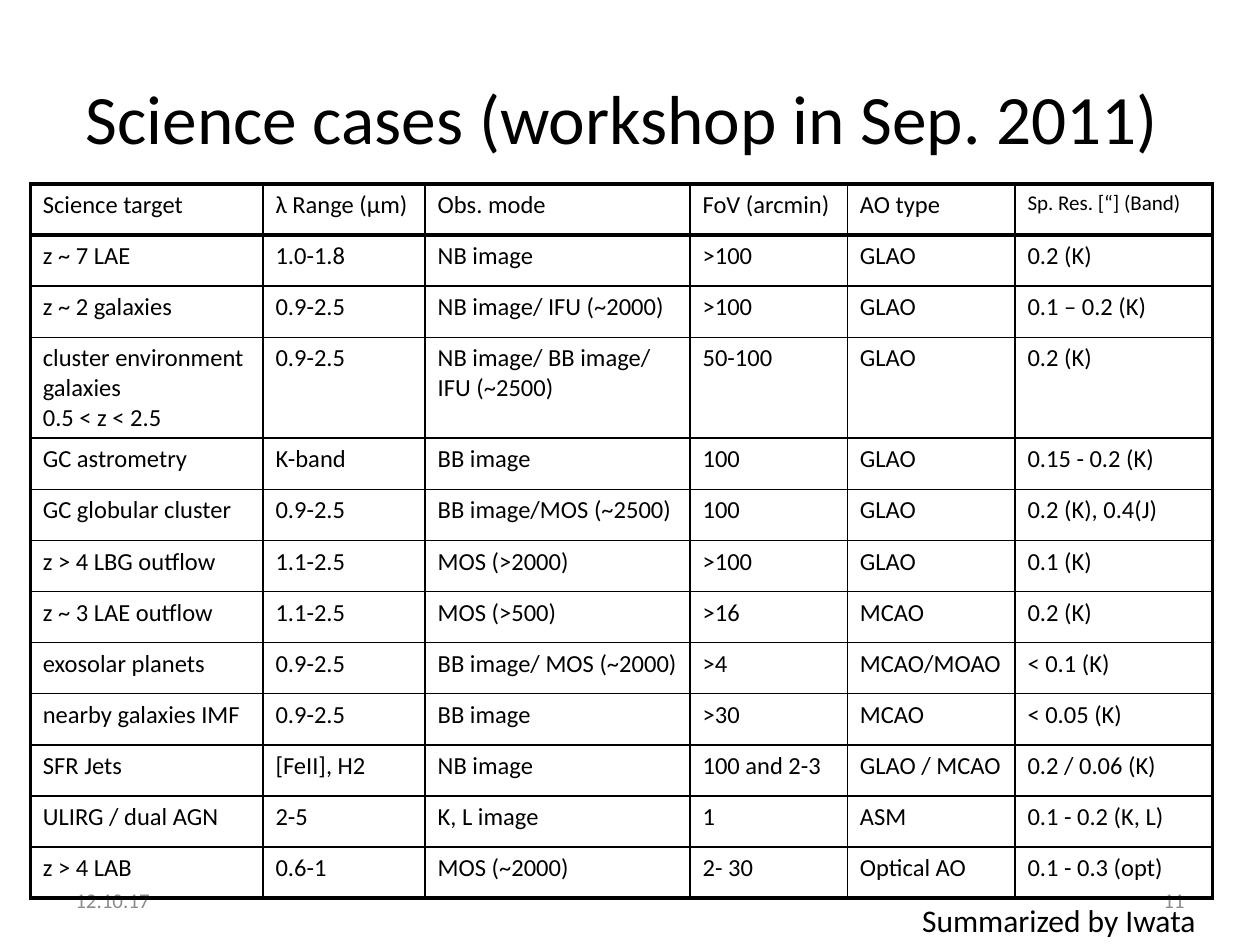
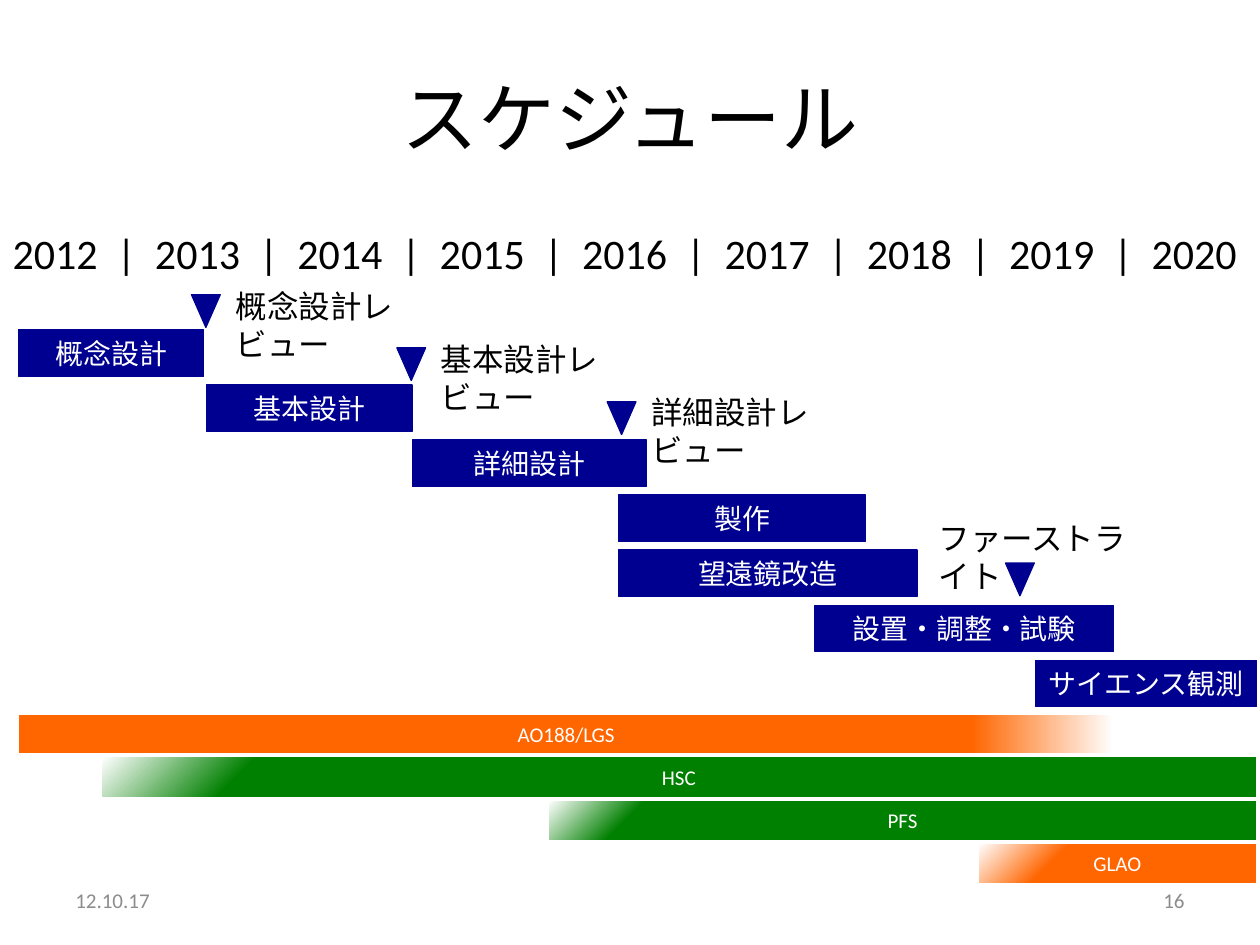
from pptx import Presentation
from pptx.dml.color import RGBColor
from pptx.enum.shapes import MSO_SHAPE
from pptx.enum.text import MSO_ANCHOR, PP_ALIGN
from pptx.oxml import parse_xml
from pptx.oxml.ns import nsdecls, qn
from pptx.util import Cm, Pt

# Shared look
FONT = "Calibri"
BLACK, WHITE, GREY = "000000", "FFFFFF", "8C8C8C"
NAVY, ORANGE, GREEN = "000090", "FF6600", "008000"
DATE = "12.10.17"
rgb = RGBColor.from_string


def style(tf, size, color=BLACK, align=PP_ALIGN.LEFT):
    for p in tf.paragraphs:
        p.alignment = align
        for r in p.runs:
            r.font.name = FONT
            r.font.size = Pt(size)
            r.font.bold = False
            r.font.color.rgb = rgb(color)


def add_box(s, kind, x, y, w, h, text="", size=18, color=BLACK,
            align=PP_ALIGN.LEFT, fill=None):
    """Add a preset shape, or a text box when kind is None."""
    box = (Cm(x), Cm(y), Cm(w), Cm(h))
    if kind is None:
        sp = s.shapes.add_textbox(*box)
    else:
        sp = s.shapes.add_shape(kind, *box)
        sp.shadow.inherit = False
        sp.text_frame.margin_left = sp.text_frame.margin_right = 0
        if fill:
            sp.fill.solid()
            sp.fill.fore_color.rgb = rgb(fill)
            sp.line.color.rgb = rgb(fill)
            sp.line.width = Pt(0.75)
        else:
            sp.fill.background()
            sp.line.fill.background()
    tf = sp.text_frame
    tf.word_wrap = True
    tf.text = text
    style(tf, size, color, align)
    return sp


prs = Presentation()
prs.slide_width, prs.slide_height = Cm(25.4), Cm(19.05)

# Slides with title, date and number
slides = []
for layout, title, size, number in [
    (5, "Science cases (workshop in Sep. 2011) ", 39.6, "11"),
    (1, "スケジュール", 44, "16"),
]:
    s = prs.slides.add_slide(prs.slide_layouts[layout])
    sp = s.shapes.title
    sp.left, sp.top, sp.width, sp.height = Cm(1.27), Cm(0.76), Cm(22.86), Cm(3.18)
    sp.text_frame.text = title
    sp.text_frame.vertical_anchor = MSO_ANCHOR.MIDDLE
    style(sp.text_frame, size, align=PP_ALIGN.CENTER)
    for x, text, align in [(1.27, DATE, PP_ALIGN.LEFT),
                           (18.21, number, PP_ALIGN.RIGHT)]:
        sp = add_box(s, None, x, 17.65, 5.92, 1.01, text, 12, GREY, align)
        sp.text_frame.vertical_anchor = MSO_ANCHOR.MIDDLE
    slides.append(s)
cases_slide, schedule_slide = slides

# Science case table
cases = [
    ("Science target", "λ Range (μm)", "Obs. mode", "FoV (arcmin)", "AO type",
     "Sp. Res. [“] (Band)"),
    ("z ~ 7 LAE", "1.0-1.8", "NB image", ">100", "GLAO", "0.2 (K)"),
    ("z ~ 2 galaxies", "0.9-2.5", "NB image/ IFU (~2000)", ">100", "GLAO",
     "0.1 – 0.2 (K)"),
    ("cluster environment galaxies\v0.5 < z < 2.5", "0.9-2.5",
     "NB image/ BB image/ IFU (~2500)", "50-100", "GLAO", "0.2 (K)"),
    ("GC astrometry", "K-band", "BB image", "100", "GLAO", "0.15 - 0.2 (K)"),
    ("GC globular cluster", "0.9-2.5", "BB image/MOS (~2500)", "100", "GLAO",
     "0.2 (K), 0.4(J)"),
    ("z > 4 LBG outflow", "1.1-2.5", "MOS (>2000)", ">100", "GLAO", "0.1 (K)"),
    ("z ~ 3 LAE outflow", "1.1-2.5", "MOS (>500)", ">16", "MCAO", "0.2 (K)"),
    ("exosolar planets", "0.9-2.5", "BB image/ MOS (~2000)", ">4", "MCAO/MOAO",
     "< 0.1 (K)"),
    ("nearby galaxies IMF", "0.9-2.5", "BB image", ">30", "MCAO", "< 0.05 (K)"),
    ("SFR Jets", "[FeII], H2", "NB image", "100 and 2-3", "GLAO / MCAO",
     "0.2 / 0.06 (K)"),
    ("ULIRG / dual AGN", "2-5", "K, L image", "1", "ASM", "0.1 - 0.2 (K, L)"),
    ("z > 4 LAB", "0.6-1", "MOS (~2000)", "2- 30", "Optical AO",
     "0.1 - 0.3 (opt)"),
]
col_widths = [4.69, 3.27, 5.34, 3.17, 3.38, 3.98]
row_height = 1.03
last_row, last_col = len(cases) - 1, len(col_widths) - 1
table = cases_slide.shapes.add_table(
    len(cases), len(col_widths), Cm(0.61), Cm(3.71),
    Cm(sum(col_widths)), Cm(row_height * len(cases))).table
table.first_row = table.horz_banding = False
for col, width in zip(table.columns, col_widths):
    col.width = Cm(width)
for i, case in enumerate(cases):
    table.rows[i].height = Cm(row_height)
    for j, text in enumerate(case):
        cell = table.cell(i, j)
        cell.text_frame.text = text
        style(cell.text_frame, 12 if (i, j) == (0, last_col) else 14)
        # Thick frame and header rule, thin inner lines
        thick = {"lnL": j == 0, "lnR": j == last_col,
                 "lnT": i <= 1, "lnB": i in (0, last_row)}
        tcPr = cell._tc.get_or_add_tcPr()
        for side, is_thick in thick.items():
            tcPr.append(parse_xml(
                f'<a:{side} {nsdecls("a")} w="{Pt(2.25 if is_thick else 1)}">'
                f'<a:solidFill><a:srgbClr val="{BLACK}"/></a:solidFill></a:{side}>'))
        cell.fill.background()

add_box(cases_slide, None, 18.34, 18.03, 6.2, 1.02, "Summarized by Iwata")

# Year axis
s = schedule_slide
sp = s.placeholders[1]
sp.left, sp.top, sp.width, sp.height = Cm(0), Cm(4.45), Cm(25.4), Cm(12.57)
tf = sp.text_frame
tf.text = "  |  ".join(str(year) for year in range(2012, 2021))
style(tf, 24)
pPr = tf.paragraphs[0]._p.get_or_add_pPr()
pPr.set("marL", str(Cm(0.95)))
pPr.set("indent", str(-Cm(0.95)))
pPr.append(parse_xml(f'<a:buNone {nsdecls("a")}/>'))

# Project phases, one row each
phases = [
    ("概念設計", 0.38, 3.73),
    ("基本設計", 4.17, 4.14),
    ("詳細設計", 8.31, 4.72),
    ("製作", 12.47, 4.98),
    ("望遠鏡改造", 12.47, 6.02),
    ("設置・調整・試験", 16.43, 6.02),
    ("サイエンス観測", 20.88, 4.45),
]
for i, (name, x, w) in enumerate(phases):
    add_box(s, MSO_SHAPE.RECTANGLE, x, 6.65 + 1.11 * i, w, 0.94, name, 16,
            WHITE, PP_ALIGN.CENTER, NAVY)

# Milestones: marker position, label position and width
milestones = [
    ("概念設計レビュー", 3.86, 5.94, 4.5, 5.66, 5.31),
    ("基本設計レビュー", 8.0, 7.01, 8.64, 6.73, 5.31),
    ("詳細設計レビュー", 12.24, 8.1, 12.88, 7.8, 5.31),
    ("ファーストライト", 20.27, 11.35, 18.67, 10.34, 4.6),
]
for name, x, y, label_x, label_y, label_w in milestones:
    sp = add_box(s, MSO_SHAPE.ISOSCELES_TRIANGLE, x, y, 0.58, 0.66, fill=NAVY)
    sp.rotation = 180
    add_box(s, None, label_x, label_y, label_w, 1.02, name)

# Instruments, fading out at the end or in at the start
fade_out = '<a:lin ang="0" scaled="0"/>'
fade_in = '<a:path path="circle"><a:fillToRect l="100000" t="100000"/></a:path>'
instruments = [
    ("AO188/LGS", 0.38, 22.07, ORANGE, 87, fade_out),
    ("HSC", 2.06, 23.25, GREEN, 87, fade_in),
    ("PFS", 11.07, 14.25, GREEN, 87, fade_in),
    ("GLAO", 19.74, 5.57, ORANGE, 71, fade_in),
]
for i, (name, x, w, color, stop, fade) in enumerate(instruments):
    sp = add_box(s, MSO_SHAPE.RECTANGLE, x, 14.41 + 0.87 * i, w, 0.77, name, 12,
                 WHITE, PP_ALIGN.CENTER)
    spPr = sp._element.spPr
    spPr.replace(spPr.find(qn("a:noFill")), parse_xml(
        f'<a:gradFill {nsdecls("a")} rotWithShape="1"><a:gsLst>'
        f'<a:gs pos="{stop * 1000}"><a:srgbClr val="{color}"/></a:gs>'
        f'<a:gs pos="100000"><a:srgbClr val="{WHITE}"/></a:gs>'
        f'</a:gsLst>{fade}</a:gradFill>'))

prs.save("out.pptx")
